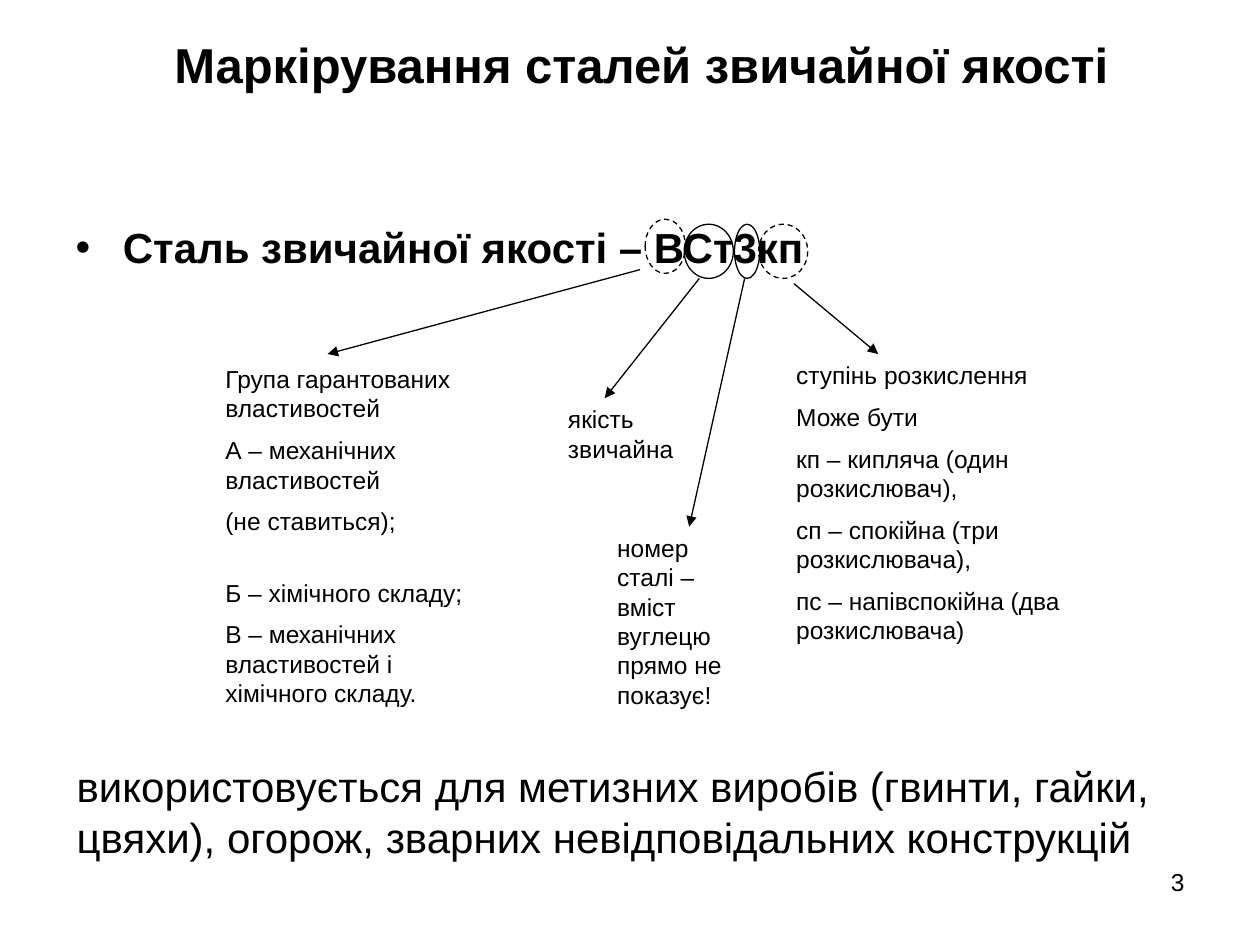
import dataclasses

import lxml.etree
import pptx
import pptx.dml.color
import pptx.enum.dml
import pptx.enum.shapes
import pptx.enum.text
import pptx.oxml.ns
import pptx.util

Inches = pptx.util.Inches
Pt = pptx.util.Pt
ALIGN = pptx.enum.text.PP_ALIGN


@dataclasses.dataclass(frozen=True)
class Theme:
    font: str = "Arial"
    ink: pptx.dml.color.RGBColor = pptx.dml.color.RGBColor(0, 0, 0)
    title_size: int = 28
    body_size: int = 24
    note_size: int = 14
    line_width: float = 0.75


class SlideBuilder:
    def __init__(self, slide, theme):
        self.slide = slide
        self.theme = theme

    def place(self, shape, bounds):
        shape.left, shape.top, shape.width, shape.height = map(Inches, bounds)

    def format_para(self, para, size, bold=False):
        for run in para.runs:
            run.font.name = self.theme.font
            run.font.size = Pt(size)
            run.font.bold = bold
            run.font.color.rgb = self.theme.ink

    def placeholder(self, shape, bounds, text, size):
        """Fill a template placeholder with one bold paragraph and return it."""
        self.place(shape, bounds)
        frame = shape.text_frame
        frame.text = text
        frame.auto_size = pptx.enum.text.MSO_AUTO_SIZE.NONE
        self.format_para(frame.paragraphs[0], size, bold=True)
        return frame.paragraphs[0]

    def text(self, bounds, lines, size, align=ALIGN.LEFT):
        """Add a text box whose paragraphs stand half a line apart."""
        box = self.slide.shapes.add_textbox(*map(Inches, bounds))
        frame = box.text_frame
        frame.word_wrap = True
        frame.text = "\n".join(lines)
        for para in frame.paragraphs:
            para.alignment = align
            para.space_before = Pt(size / 2)
            self.format_para(para, size)
        return frame

    def style_line(self, line):
        line.color.rgb = self.theme.ink
        line.width = Pt(self.theme.line_width)

    def ring(self, bounds, dashed):
        ring = self.slide.shapes.add_shape(
            pptx.enum.shapes.MSO_SHAPE.OVAL, *map(Inches, bounds))
        ring.shadow.inherit = False
        ring.fill.background()
        self.style_line(ring.line)
        if dashed:
            ring.line.dash_style = pptx.enum.dml.MSO_LINE.DASH

    def arrow(self, start, end):
        arrow = self.slide.shapes.add_connector(
            pptx.enum.shapes.MSO_CONNECTOR.STRAIGHT, *map(Inches, start + end))
        self.style_line(arrow.line)
        qn = pptx.oxml.ns.qn
        properties = arrow.element.find(qn("p:spPr"))
        line = properties.find(qn("a:ln"))
        lxml.etree.SubElement(line, qn("a:tailEnd"), type="triangle")
        lxml.etree.SubElement(properties, qn("a:effectLst"))

    def callout(self, ring, dashed, start, end, bounds, lines):
        """Ring one part of the steel grade and point from it to its meaning."""
        self.ring(ring, dashed)
        self.arrow(start, end)
        return self.text(bounds, lines, self.theme.note_size)


def main():
    deck = pptx.Presentation()
    deck.slide_width, deck.slide_height = Inches(10), Inches(7.5)
    slide = deck.slides.add_slide(deck.slide_layouts[1])
    theme = Theme()
    builder = SlideBuilder(slide, theme)

    title = builder.placeholder(
        slide.shapes.title, (0.59, 0.21, 9, 0.59),
        "Маркірування сталей звичайної якості", theme.title_size)
    title.alignment = ALIGN.CENTER
    grade = builder.placeholder(
        slide.placeholders[1], (0.5, 1.75, 6.39, 0.46),
        "Сталь звичайної якості – ВСт3кп", theme.body_size)
    grade.line_spacing = 0.9

    builder.callout(
        (5.43, 1.78, 0.39, 0.43), False, (5.55, 2.21), (4.8, 3.16),
        (4.41, 3.16, 1.06, 0.57), ["якість звичайна"])
    builder.callout(
        (6.02, 1.78, 0.39, 0.43), True, (6.3, 2.25), (6.97, 2.81),
        (6.22, 2.81, 2.95, 2.43),
        ["ступінь розкислення",
         "Може бути",
         "кп – кипляча (один розкислювач),",
         "сп – спокійна (три розкислювача),",
         "пс – напівспокійна (два розкислювача)"])
    groups = builder.callout(
        (5.12, 1.74, 0.32, 0.43), True, (5.08, 2.14), (2.6, 2.81),
        (1.69, 2.84, 2.09, 2.89),
        ["Група гарантованих властивостей",
         "А – механічних властивостей",
         "(не ставиться);",
         "Б – хімічного складу;",
         "В – механічних властивостей і хімічного складу."])
    groups.paragraphs[3].space_before = Pt(24)
    builder.callout(
        (5.83, 1.78, 0.2, 0.43), False, (5.91, 2.21), (5.47, 4.18),
        (4.8, 4.18, 1.06, 1.5),
        ["номер сталі – вміст вуглецю прямо не показує!"])

    builder.text(
        (0.51, 5.99, 9.02, 0.9),
        ["використовується для метизних виробів (гвинти, гайки, цвяхи), "
         "огорож, зварних невідповідальних конструкцій"],
        theme.body_size)
    builder.text((7.17, 6.83, 2.33, 0.52), ["3"], theme.note_size, ALIGN.RIGHT)

    deck.save("out.pptx")


if __name__ == "__main__":
    main()
